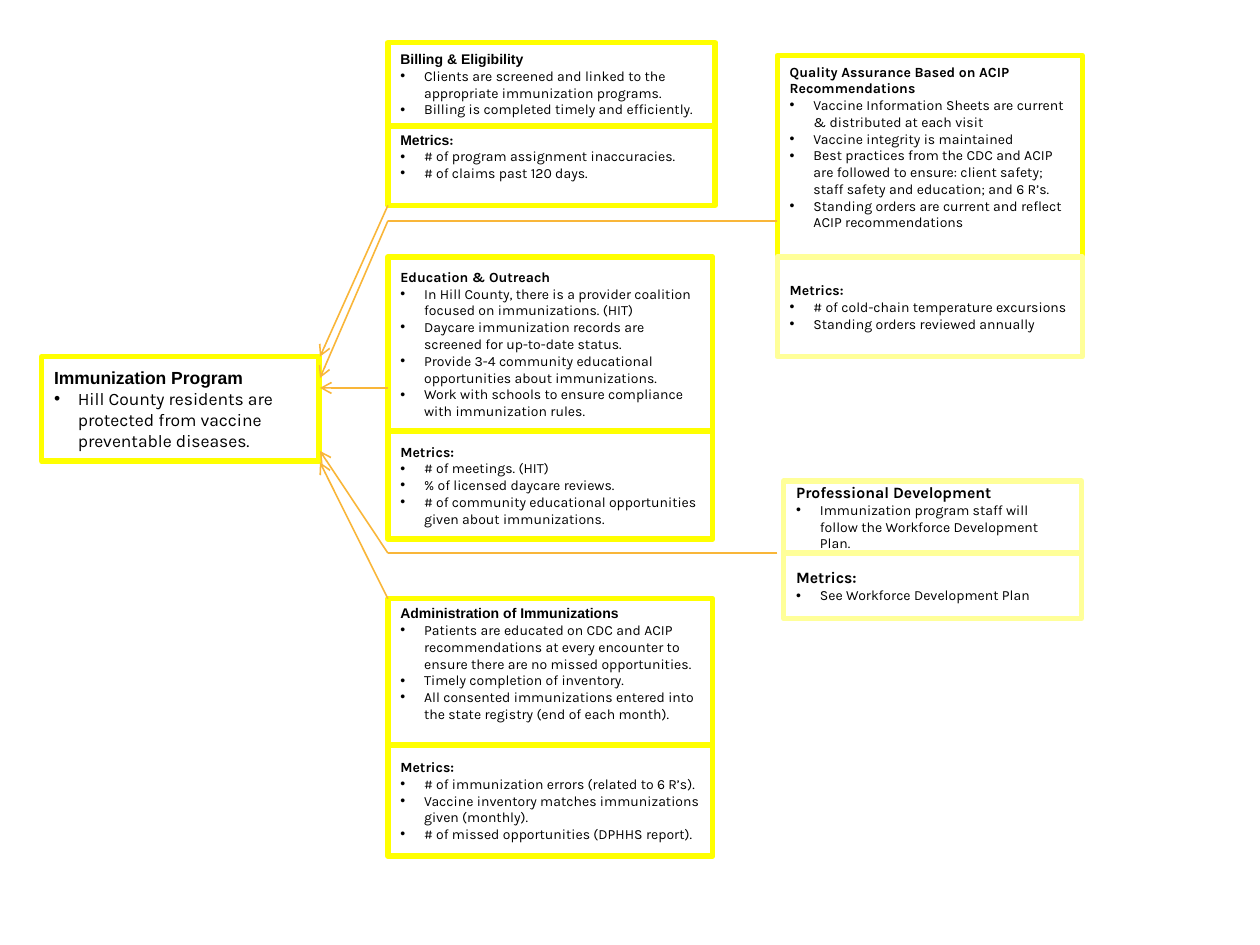
"""Build the immunization program slide with its goals, metrics and arrows."""
from lxml.etree import SubElement
from pptx import Presentation
from pptx.dml.color import RGBColor
from pptx.enum.shapes import MSO_CONNECTOR, MSO_SHAPE
from pptx.enum.text import MSO_ANCHOR, PP_ALIGN
from pptx.oxml.ns import qn
from pptx.util import Cm, Pt

BLACK = RGBColor(0x00, 0x00, 0x00)
WHITE = RGBColor(0xFF, 0xFF, 0xFF)
YELLOW = RGBColor(0xFF, 0xFF, 0x00)
PALE_YELLOW = RGBColor(0xFF, 0xFF, 0x99)
ORANGE = RGBColor(0xF9, 0xB6, 0x39)
HEADING_FONT, BODY_FONT = "Arial", "Karla"
INSET, INDENT = 0.13, 0.48

STACKS = [
    {"left": 0.84, "top": 7.19, "width": 5.59, "panels": [
        {"height": 2.11, "size": 10, "body_size": 10,
         "heading": [("Immunization Program", HEADING_FONT)],
         "bullets": ["Hill County residents are protected from vaccine preventable diseases."]},
    ]},
    {"left": 7.82, "top": 0.86, "width": 6.6, "panels": [
        {"height": 1.68, "heading": [("Billing & Eligibility", HEADING_FONT)],
         "bullets": ["Clients are screened and linked to the appropriate immunization programs.",
                     "Billing is completed timely and efficiently."]},
        {"height": 1.6, "space_below": 0.37,
         "heading": [("Metrics", HEADING_FONT), (":", BODY_FONT)],
         "bullets": ["# of program assignment inaccuracies.",
                     "# of claims past 120 days."]},
    ]},
    {"left": 7.82, "top": 5.18, "width": 6.55, "panels": [
        {"height": 3.51, "heading": [("Education & Outreach", BODY_FONT)],
         "bullets": ["In Hill County, there is a provider coalition focused on immunizations. (HIT)",
                     "Daycare immunization records are screened for up-to-date status.",
                     "Provide 3-4 community educational opportunities about immunizations.",
                     "Work with schools to ensure compliance with immunization rules."]},
        {"height": 2.18, "heading": [("Metrics:", BODY_FONT)],
         "bullets": ["# of meetings. (HIT)",
                     "% of licensed daycare reviews.",
                     "# of community educational opportunities given about immunizations."]},
    ]},
    {"left": 7.82, "top": 12.07, "width": 6.55, "panels": [
        {"height": 2.95, "space_below": 0.33,
         "heading": [("Administration of Immunizations", HEADING_FONT)],
         "bullets": ["Patients are educated on CDC and ACIP recommendations at every encounter "
                     "to ensure there are no missed opportunities.",
                     "Timely completion of inventory.",
                     "All consented immunizations entered into the state registry "
                     "(end of each month)."]},
        {"height": 2.24, "heading": [("Metrics:", BODY_FONT)],
         "bullets": ["# of immunization errors (related to 6 R’s).",
                     "Vaccine inventory matches immunizations given (monthly).",
                     "# of missed opportunities (DPHHS report)."]},
    ]},
    {"left": 15.67, "top": 1.12, "width": 6.15, "panels": [
        {"height": 4.06, "space_below": 0.37,
         "heading": [("Quality Assurance Based on ACIP Recommendations", BODY_FONT)],
         "bullets": ["Vaccine Information Sheets are current & distributed at each visit",
                     "Vaccine integrity is maintained",
                     "Best practices from the CDC and ACIP are followed to ensure: client safety; "
                     "staff safety and education; and 6 R’s.",
                     "Standing orders are current and reflect ACIP recommendations"]},
        {"height": 2.01, "outline": PALE_YELLOW, "heading": [("Metrics:", BODY_FONT)],
         "bullets": ["# of cold-chain temperature excursions",
                     "Standing orders reviewed annually"]},
    ]},
    {"left": 15.8, "top": 9.7, "width": 6, "panels": [
        {"height": 1.45, "size": 9, "outline": PALE_YELLOW,
         "heading": [("Professional Development", BODY_FONT)],
         "bullets": ["Immunization program staff will follow the Workforce Development Plan."]},
        {"height": 1.32, "size": 9, "outline": PALE_YELLOW,
         "heading": [("Metrics:", BODY_FONT)],
         "bullets": ["See Workforce Development Plan"]},
    ]},
]

PROGRAM_EDGE, MIDDLE_EDGE, RIGHT_EDGE = 6.45, 7.82, 15.67
ARROWS = [(4.14, 7.19), (7.82, 7.82), (12.07, 9.32), (4.45, 7.62), (11.15, 9.09)]
BRANCHES = [4.45, 11.15]


def add_span(para, text, *, font=BODY_FONT, size=8, bold=False):
    """Add a formatted run to a paragraph."""
    span = para.add_run()
    span.text = text
    span.font.name = font
    span.font.size = Pt(size)
    span.font.bold = bold
    span.font.color.rgb = BLACK


def add_bullet(para):
    """Give a paragraph a hanging bullet."""
    properties = para._p.get_or_add_pPr()
    properties.set("marL", str(Cm(INDENT)))
    properties.set("indent", str(-Cm(INDENT)))
    SubElement(properties, qn("a:buFont"), typeface="Arial")
    SubElement(properties, qn("a:buChar"), char="•")


def add_panel(page, left, top, width, panel):
    """Draw one outlined box with its heading and bullets."""
    box = page.shapes.add_shape(
        MSO_SHAPE.RECTANGLE, Cm(left), Cm(top), Cm(width), Cm(panel["height"]))
    box.shadow.inherit = False
    box.fill.solid()
    box.fill.fore_color.rgb = WHITE
    box.line.color.rgb = panel.get("outline", YELLOW)
    box.line.width = Pt(3.15)
    frame = box.text_frame
    frame.word_wrap = True
    frame.vertical_anchor = MSO_ANCHOR.MIDDLE
    frame.margin_bottom = Cm(INSET + panel.get("space_below", 0))
    heading = frame.paragraphs[0]
    heading.alignment = PP_ALIGN.LEFT
    for text, font in panel["heading"]:
        add_span(heading, text, font=font, size=panel.get("size", 8), bold=True)
    for text in panel["bullets"]:
        para = frame.add_paragraph()
        para.alignment = PP_ALIGN.LEFT
        add_bullet(para)
        add_span(para, text, size=panel.get("body_size", 8))


def add_link(page, start, end, arrow=False):
    """Draw a line between two points, with an arrowhead at its end if asked."""
    link = page.shapes.add_connector(
        MSO_CONNECTOR.STRAIGHT, *(Cm(value) for value in start + end))
    link.line.color.rgb = ORANGE
    link.line.width = Pt(0.9)
    if arrow:
        SubElement(link.line._get_or_add_ln(), qn("a:tailEnd"), type="arrow")
    SubElement(link._element.spPr, qn("a:effectLst"))


def main():
    """Lay out the stacks and links and save the deck."""
    deck = Presentation()
    deck.slide_width, deck.slide_height = Cm(25.4), Cm(19.05)
    page = deck.slides.add_slide(deck.slide_layouts[6])
    for stack in STACKS:
        top = stack["top"]
        for panel in stack["panels"]:
            add_panel(page, stack["left"], top, stack["width"], panel)
            top += panel["height"]
    for start, end in ARROWS:
        add_link(page, (MIDDLE_EDGE, start), (PROGRAM_EDGE, end), arrow=True)
    for level in BRANCHES:
        add_link(page, (RIGHT_EDGE, level), (MIDDLE_EDGE, level))
    deck.save("out.pptx")


if __name__ == "__main__":
    main()
